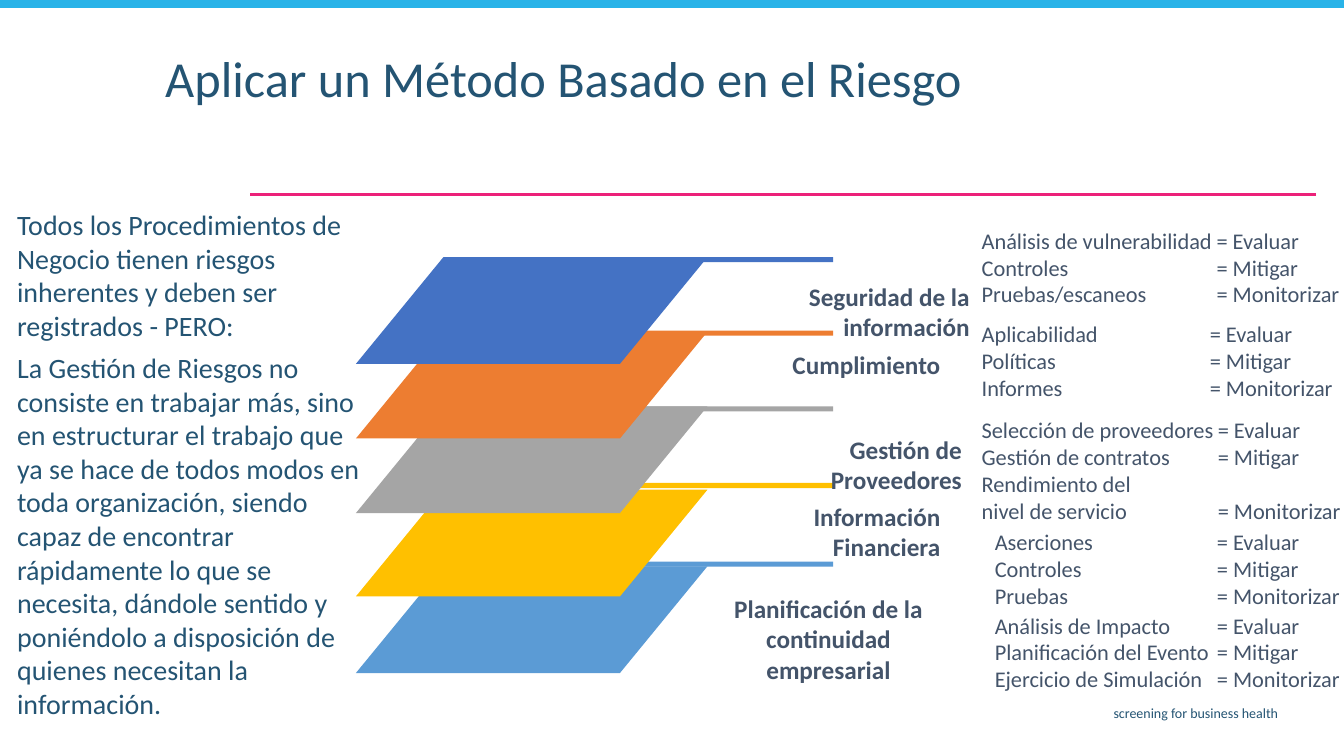
import pptx
import pptx.util
import pptx.dml.color
import pptx.enum.shapes
import pptx.enum.text
import pptx.oxml.ns
from lxml import etree

Cm, Pt = pptx.util.Cm, pptx.util.Pt
SHAPE = pptx.enum.shapes.MSO_SHAPE
ALIGN = pptx.enum.text.PP_ALIGN
qn = pptx.oxml.ns.qn

# Content
NAVY, SLATE = "245473", "44546A"
TITLE = "Aplicar un Método Basado en el Riesgo"
INTRO = [
    "Todos los Procedimientos de Negocio tienen riesgos inherentes y deben ser "
    "registrados - PERO:",
    "La Gestión de Riesgos no consiste en trabajar más, sino en estructurar el "
    "trabajo que ya se hace de todos modos en toda organización, siendo capaz de "
    "encontrar rápidamente lo que se necesita, dándole sentido y poniéndolo a "
    "disposición de quienes necesitan la información.",
]
FOOT = "screening for business health"
# Layers from top to bottom: colour, plane top, bar top
LAYERS = [
    ("4472C4", 6.48, 6.48),
    ("ED7D31", 8.36, 8.33),
    ("A5A5A5", 10.24, 10.24),
    ("FFC000", 12.34, 12.17),
    ("5B9BD5", 14.27, 14.15),
]
# Layer names: paragraphs, right edge, top, alignment
LABELS = [
    (["Seguridad de la información"], 24.69, 6.96, ALIGN.RIGHT),
    (["Cumplimiento"], 23.95, 8.69, ALIGN.RIGHT),
    (["Gestión de Proveedores"], 24.49, 10.82, ALIGN.RIGHT),
    (["Información Financiera"], 23.95, 12.5, ALIGN.RIGHT),
    (["Planificación de la continuidad", "empresarial"], 23.63, 14.83, ALIGN.CENTER),
]
# Tasks: left, top, tab stop, rows
TASKS = [
    (24.49, 5.59, 5.92, ["Análisis de vulnerabilidad\t= Evaluar",
                         "Controles\t= Mitigar",
                         "Pruebas/escaneos\t= Monitorizar"]),
    (24.49, 7.95, 5.75, ["Aplicabilidad\t= Evaluar",
                         "Políticas\t= Mitigar",
                         "Informes\t= Monitorizar"]),
    (24.49, 10.36, 5.95, ["Selección de proveedores\t= Evaluar",
                          "Gestión de contratos\t= Mitigar",
                          "Rendimiento del",
                          "nivel de servicio\t= Monitorizar"]),
    (24.82, 13.18, 5.6, ["Aserciones\t= Evaluar",
                         "Controles\t= Mitigar",
                         "Pruebas\t= Monitorizar"]),
    (24.82, 15.29, 5.6, ["Análisis de Impacto\t= Evaluar",
                         "Planificación del Evento\t= Mitigar",
                         "Ejercicio de Simulación\t= Monitorizar"]),
]
WIDE, HIGH = 33.87, 19.05


def paint(form, code):
    form.solid()
    form.fore_color.rgb = pptx.dml.color.RGBColor.from_string(code)


def place(shape, left, top, width, height):
    shape.left, shape.top = Cm(left), Cm(top)
    shape.width, shape.height = Cm(width), Cm(height)


def write(shape, lines, size, code, align=ALIGN.LEFT, bold=False, gap=0, tab=None):
    frame = shape.text_frame
    frame.word_wrap = True
    frame.auto_size = pptx.enum.text.MSO_AUTO_SIZE.NONE
    frame.vertical_anchor = pptx.enum.text.MSO_ANCHOR.TOP
    for i, line in enumerate(lines):
        par = frame.paragraphs[0] if i == 0 else frame.add_paragraph()
        par.text = line
        par.alignment = align
        par.space_before = Pt(gap if i else 0)
        props = par._p.get_or_add_pPr()
        if shape.is_placeholder:
            props.set("marL", "0")
            props.set("indent", "0")
            etree.SubElement(props, qn("a:buNone"))
        if tab:
            stops = etree.SubElement(props, qn("a:tabLst"))
            etree.SubElement(stops, qn("a:tab"), pos=str(int(Cm(tab))), algn="l")
        par.font.name, par.font.size, par.font.bold = "Calibri", Pt(size), bold
        paint(par.font.fill, code)
    return frame


def block(kind, left, top, width, height, code):
    shape = slide.shapes.add_shape(kind, Cm(left), Cm(top), Cm(width), Cm(height))
    shape.shadow.inherit = False
    paint(shape.fill, code)
    shape.line.fill.background()
    return shape


def label(left, top, width, height, *args, **opts):
    box = slide.shapes.add_textbox(Cm(left), Cm(top), Cm(width), Cm(height))
    return write(box, *args, **opts)


deck = pptx.Presentation()
deck.slide_width, deck.slide_height = Cm(WIDE), Cm(HIGH)
slide = deck.slides.add_slide(deck.slide_layouts[1])

# Top band and rule
block(SHAPE.RECTANGLE, 0, 0, WIDE, 0.2, "29B3E8")
rule = slide.shapes.add_connector(
    pptx.enum.shapes.MSO_CONNECTOR.STRAIGHT, Cm(33.17), Cm(4.9), Cm(6.3), Cm(4.9))
etree.SubElement(rule._element.spPr, qn("a:effectLst"))
paint(rule.line.fill, "EC2179")
rule.line.width = Pt(1.5)

# Title and intro
title, body = slide.placeholders[0], slide.placeholders[1]
place(title, 3.91, 1.24, 24.59, 1.93)
write(title, [TITLE], 36, NAVY)
title.text_frame.paragraphs[0].line_spacing = 0.9
place(body, 0.2, 5.13, 9.3, 13.26)
frame = write(body, INTRO, 20, NAVY, gap=6)
frame.margin_left = frame.margin_right = Cm(0.23)
frame.margin_top = frame.margin_bottom = Cm(0.1)

# Bars, then planes stacked upwards
for code, top, bar in LAYERS:
    block(SHAPE.RECTANGLE, 12.14, bar, 8.86, 0.13, code)
for code, top, bar in reversed(LAYERS):
    plane = block(SHAPE.PARALLELOGRAM, 8.97, top, 8.86, 2.69, code)
    plane.adjustments[0] = 0.82

# Layer names
SPAN = 5.5
for lines, right, top, align in LABELS:
    label(right - SPAN, top, SPAN, 1.8, lines, 18, SLATE, align, bold=True)

# Tasks
for left, top, tab, rows in TASKS:
    frame = label(left, top, WIDE - left, 0.25 + 0.69 * len(rows), rows, 16, SLATE, tab=tab)
    frame.margin_right = 0

# Footer
label(9.27, 17.63, 23.19, 0.74, [FOOT], 10, NAVY, ALIGN.RIGHT)

deck.save("out.pptx")
